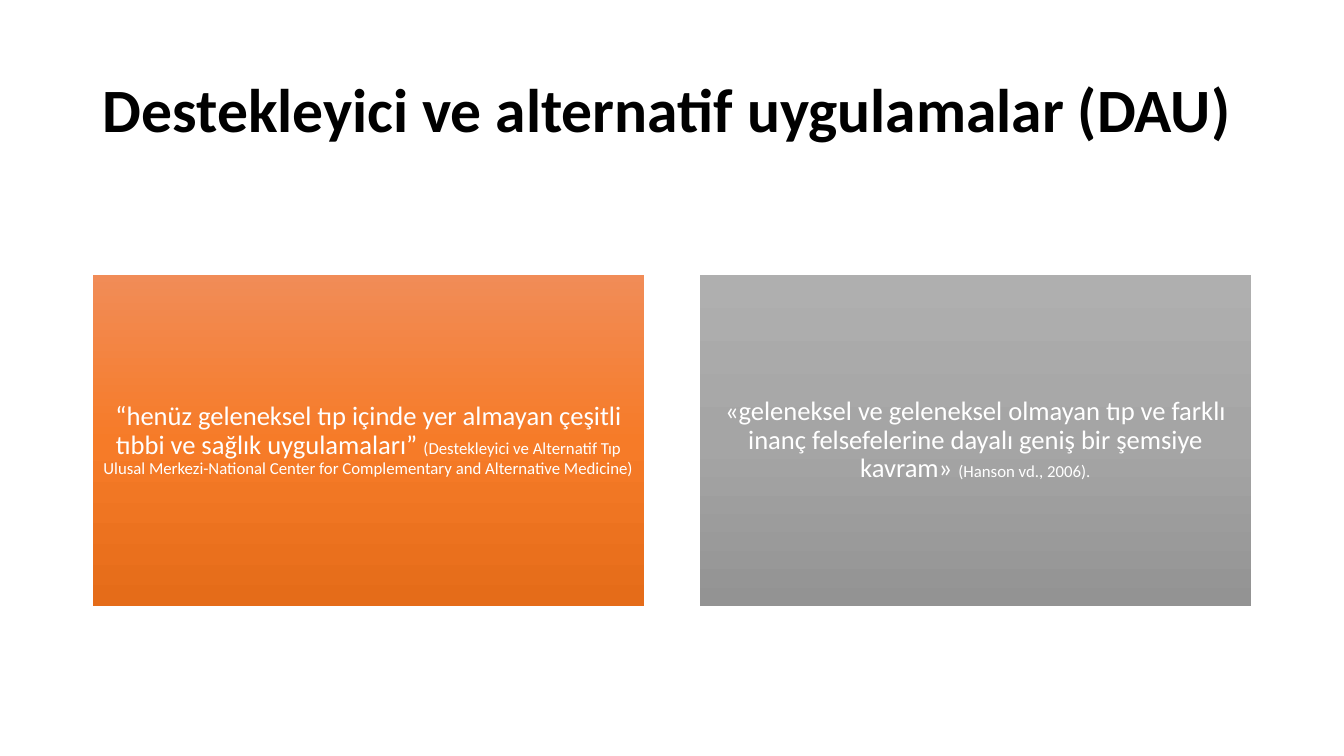
from copy import deepcopy

from pptx import Presentation
from pptx import util as u
from pptx.dml.color import RGBColor
from pptx.enum import shapes, text

PX = 12192000 / 1344


def px(length):
    return u.Emu(round(length * PX))


def colour(hex_value):
    return RGBColor.from_string(hex_value)


class SlideBuilder:
    font_name = "Calibri"
    line_spacing = 0.9

    def __init__(self, slide):
        self.slide = slide

    def add_runs(self, shape, runs, align, inset, font_colour, bold=False):
        """Fill a shape with one paragraph made of (wording, point size) runs."""
        frame = shape.text_frame
        frame_format = {
            "word_wrap": True,
            "vertical_anchor": text.MSO_ANCHOR.MIDDLE,
            "margin_left": px(inset),
            "margin_right": px(inset),
            "margin_top": px(inset),
            "margin_bottom": px(inset),
        }
        for name, value in frame_format.items():
            setattr(frame, name, value)
        paragraph = frame.paragraphs[0]
        paragraph.alignment = align
        paragraph.line_spacing = self.line_spacing
        for wording, size in runs:
            run = paragraph.add_run()
            run.text = wording
            font_format = {"name": self.font_name, "size": u.Pt(size), "bold": bold}
            for name, value in font_format.items():
                setattr(run.font, name, value)
            run.font.color.rgb = colour(font_colour)

    def title(self, wording, left, top, width, height):
        box = self.slide.shapes.add_textbox(px(left), px(top), px(width), px(height))
        self.add_runs(box, [(wording, 44)], text.PP_ALIGN.LEFT, 10, "000000", bold=True)

    def card(self, runs, stops, left, top, width, height):
        card = self.slide.shapes.add_shape(
            shapes.MSO_SHAPE.RECTANGLE, px(left), px(top), px(width), px(height))
        card.shadow.inherit = False
        card.line.fill.background()
        self.gradient(card, stops)
        self.add_runs(card, runs, text.PP_ALIGN.CENTER, 8, "FFFFFF")

    def gradient(self, shape, stops):
        """Shade a shape from top to bottom through three evenly spaced colours."""
        shape.fill.gradient()
        shape.fill.gradient_angle = 270
        first_stop = shape._element.spPr.xpath(".//a:gs")[0]
        first_stop.addnext(deepcopy(first_stop))
        for index, (stop, hex_value) in enumerate(zip(shape.fill.gradient_stops, stops)):
            stop.position = index / 2
            stop.color.rgb = colour(hex_value)


CARDS = [
    ([("“henüz geleneksel tıp içinde yer almayan çeşitli tıbbi ve sağlık uygulamaları” ", 19),
      ("(Destekleyici ve Alternatif Tıp Ulusal Merkezi-National Center for "
       "Complementary and Alternative Medicine)", 12)],
     ["F18C57", "F67B28", "E56C19"]),
    ([("«geleneksel ve geleneksel olmayan tıp ve farklı inanç felsefelerine dayalı "
       "geniş bir şemsiye kavram» ", 19),
      ("(Hanson vd., 2006).", 12)],
     ["AFAFAF", "A5A5A5", "939393"]),
]


def main():
    presentation = Presentation()
    presentation.slide_width = px(1344)
    presentation.slide_height = px(756)
    builder = SlideBuilder(presentation.slides.add_slide(presentation.slide_layouts[6]))
    builder.title("Destekleyici ve alternatif uygulamalar (DAU)", 93, 40, 1159, 146)
    card_width, gap = 551, 56
    for index, (runs, stops) in enumerate(CARDS):
        builder.card(runs, stops, 93 + index * (card_width + gap), 275, card_width, 331)
    presentation.save("out.pptx")


if __name__ == "__main__":
    main()
